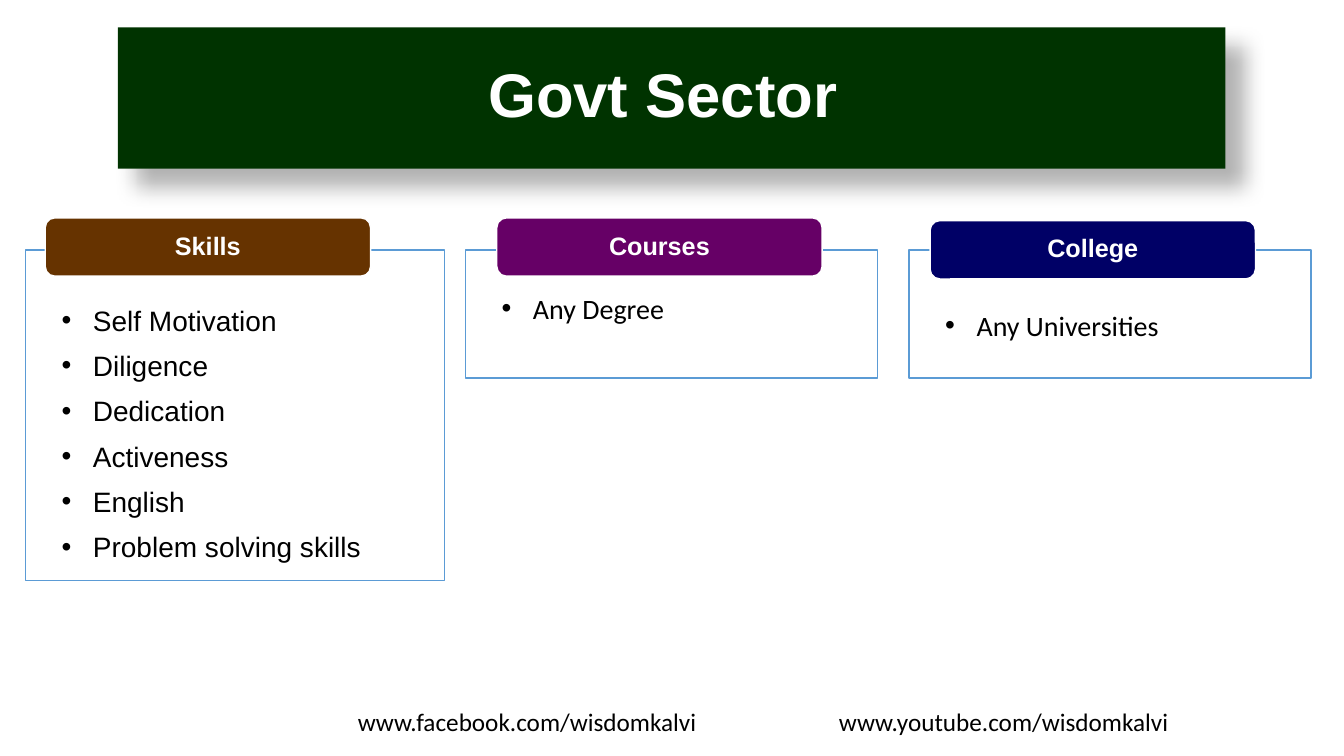
from lxml.etree import SubElement
from pptx import Presentation
from pptx.dml.color import RGBColor
from pptx.enum.shapes import MSO_SHAPE
from pptx.enum.text import MSO_ANCHOR, MSO_AUTO_SIZE, PP_ALIGN
from pptx.oxml import parse_xml
from pptx.oxml.ns import nsdecls, qn
from pptx.util import Cm, Pt


def rgb(value):
    return RGBColor.from_string(value)


def write(p, text, font, size, color, bold=False):
    r = p.add_run()
    r.text = text
    for name, value in {"name": font, "size": Pt(size), "bold": bold}.items():
        setattr(r.font, name, value)
    r.font.color.rgb = rgb(color)


prs = Presentation()
prs.slide_width, prs.slide_height = Cm(33.87), Cm(19.05)
slide = prs.slides.add_slide(prs.slide_layouts.get_by_name("Comparison"))
places = {sp.placeholder_format.idx: sp for sp in slide.placeholders}

# Title banner
title = slide.shapes.title
for name, value in {"left": 2.97, "top": 0.69, "width": 27.91, "height": 3.56}.items():
    setattr(title, name, Cm(value))
title.fill.solid()
title.fill.fore_color.rgb = rgb("003300")
title.line.fill.background()
title._element.spPr.append(parse_xml(
    f'<a:effectLst {nsdecls("a")}><a:outerShdw blurRad="{Pt(15)}" dist="{Pt(18)}" '
    'dir="2700000" algn="tl" rotWithShape="0"><a:srgbClr val="000000">'
    '<a:alpha val="30000"/></a:srgbClr></a:outerShdw></a:effectLst>'))
tf = title.text_frame
tf.auto_size = MSO_AUTO_SIZE.NONE
tf.vertical_anchor = MSO_ANCHOR.MIDDLE
p = tf.paragraphs[0]
p.alignment, p.line_spacing = PP_ALIGN.CENTER, 0.9
write(p, "Govt Sector ", "Arial", 44, "FFFFFF", True)

# Columns: placeholder, panel box, header position, header colour, list format
columns = [
    ("Skills", 2, (0.64, 10.57, 8.33), (1.14, 5.49), "663300", "Arial", 1.35,
     ["Self Motivation", "Diligence", "Dedication", "Activeness", "English",
      "Problem solving skills"]),
    ("Courses", 4, (11.73, 10.39, 3.23), (12.52, 5.49), "660066", "Calibri", 1.0,
     ["Any Degree"]),
    ("College", 1, (22.91, 10.13, 3.23), (23.44, 5.56), "000066", "Calibri", 1.5,
     ["Any Universities"]),
]
for heading, idx, (x, w, h), (head_x, head_y), color, font, spacing, items in columns:
    panel = places.pop(idx)
    for name, value in {"left": x, "top": 6.3, "width": w, "height": h}.items():
        setattr(panel, name, Cm(value))
    panel.fill.solid()
    panel.fill.fore_color.rgb = rgb("FFFFFF")
    fill_color = panel._element.spPr.find(qn("a:solidFill"))[0]
    SubElement(fill_color, qn("a:alpha"), val="90000")
    panel.line.color.rgb = rgb("5B9BD5")
    panel.line.width = Pt(1)
    tf = panel.text_frame
    for name, value in {"margin_left": Cm(0.91), "margin_top": Cm(1.04),
                        "margin_right": Cm(0.91), "margin_bottom": Cm(0.36),
                        "vertical_anchor": MSO_ANCHOR.TOP,
                        "auto_size": MSO_AUTO_SIZE.NONE}.items():
        setattr(tf, name, value)
    for i, item in enumerate(items):
        p = tf.add_paragraph() if i else tf.paragraphs[0]
        pPr = p._p.get_or_add_pPr()
        pPr.set("marL", str(Cm(0.79)))
        pPr.set("indent", str(-Cm(0.79)))
        SubElement(pPr, qn("a:buFont"), typeface="Arial")
        SubElement(pPr, qn("a:buChar"), char="•")
        p.space_before, p.line_spacing = Pt(0), spacing
        write(p, item, font, 20, "000000")

    head = slide.shapes.add_shape(MSO_SHAPE.ROUNDED_RECTANGLE, Cm(head_x), Cm(head_y),
                                  Cm(8.2), Cm(1.47))
    head.shadow.inherit = False
    head.fill.solid()
    head.fill.fore_color.rgb = rgb(color)
    head.line.color.rgb = rgb("FFFFFF")
    head.line.width = Pt(1)
    head.text_frame.vertical_anchor = MSO_ANCHOR.MIDDLE
    p = head.text_frame.paragraphs[0]
    p.alignment, p.line_spacing = PP_ALIGN.CENTER, 0.9
    write(p, heading, "Arial", 18, "FFFFFF", True)

for x, address in [(7.57, "www.facebook.com/wisdomkalvi"),
                   (19.58, "www.youtube.com/wisdomkalvi")]:
    tf = slide.shapes.add_textbox(Cm(x), Cm(17.68), Cm(11.43), Cm(1.02)).text_frame
    tf.word_wrap = True
    tf.vertical_anchor = MSO_ANCHOR.MIDDLE
    p = tf.paragraphs[0]
    p.alignment = PP_ALIGN.CENTER
    write(p, address, "Calibri", 18, "000000")

# Unused placeholders
for sp in places.values():
    if sp.placeholder_format.idx:
        sp._element.getparent().remove(sp._element)

prs.save("out.pptx")
